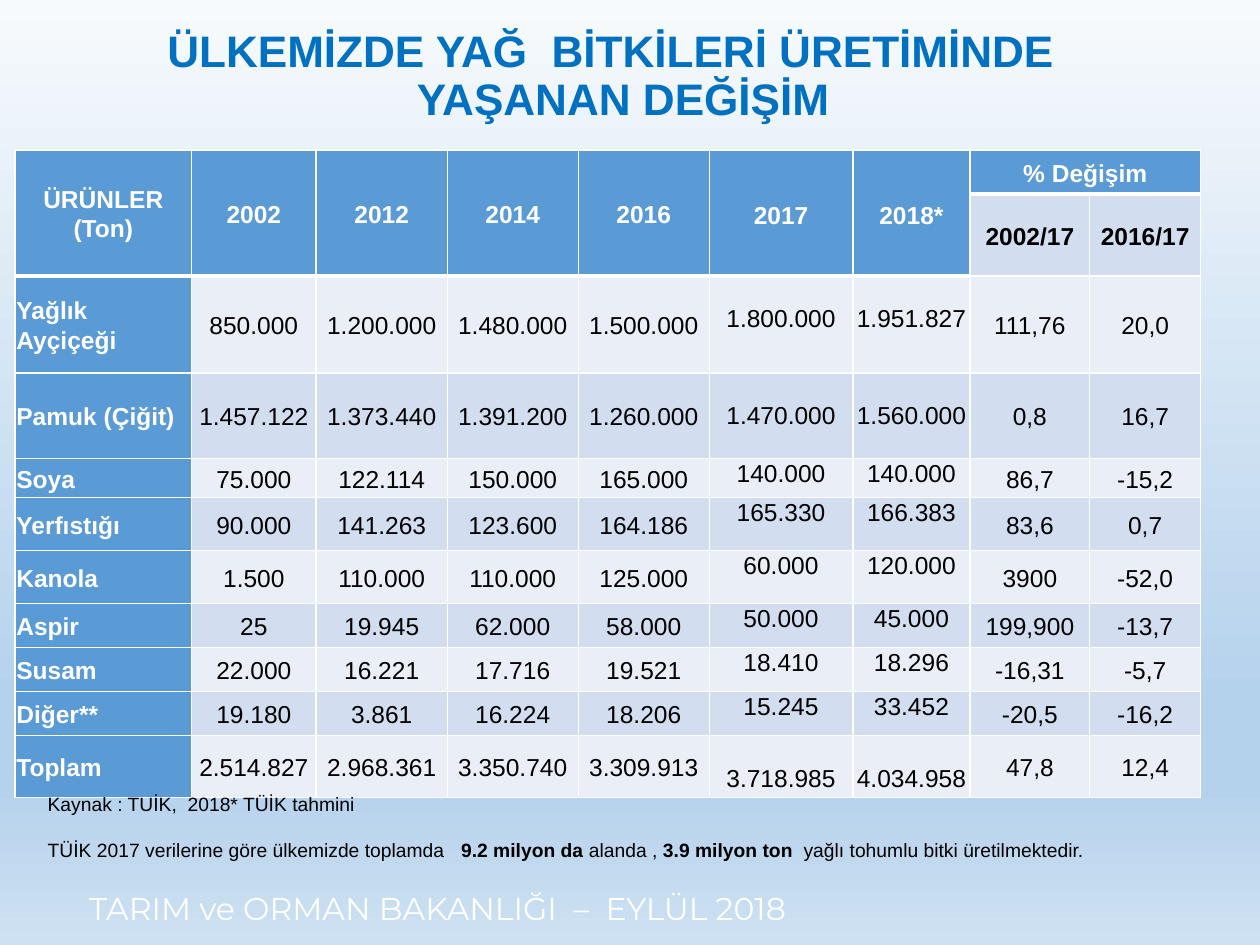
from lxml.etree import SubElement
from pptx import Presentation
from pptx.dml.color import RGBColor
from pptx.enum.text import MSO_ANCHOR, MSO_AUTO_SIZE, PP_ALIGN
from pptx.oxml.ns import qn
from pptx.util import Inches, Pt

WHITE = RGBColor(0xFF, 0xFF, 0xFF)
BLACK = RGBColor(0x00, 0x00, 0x00)
TITLE_BLUE = RGBColor(0x00, 0x70, 0xC0)
HEADER_BLUE = RGBColor(0x5B, 0x9B, 0xD5)
LIGHT_BAND = RGBColor(0xEA, 0xEF, 0xF7)
DARK_BAND = RGBColor(0xD2, 0xDE, 0xEF)
BACKGROUND_STOPS = [
    (0, RGBColor(0xF7, 0xFA, 0xFD)),
    (74, RGBColor(0xB5, 0xD2, 0xEC)),
    (83, RGBColor(0xB5, 0xD2, 0xEC)),
    (100, RGBColor(0xCE, 0xE1, 0xF2)),
]

COLUMN_WIDTHS = [1.4, 0.99, 1.04, 1.04, 1.04, 1.14, 0.93, 0.95, 0.88]
ROW_HEIGHTS = [0.35, 0.63, 0.77, 0.68, 0.31, 0.42, 0.42, 0.35, 0.35, 0.35, 0.49]
HEADERS = ["ÜRÜNLER\n(Ton)", "2002", "2012", "2014", "2016", "2017", "2018*"]
CHANGE_PERIODS = ["2002/17", "2016/17"]
PRODUCTS = [
    ["Yağlık Ayçiçeği", "850.000", "1.200.000", "1.480.000", "1.500.000",
     "1.800.000", "1.951.827", "111,76", "20,0"],
    ["Pamuk (Çiğit)", "1.457.122", "1.373.440", "1.391.200", "1.260.000",
     "1.470.000", "1.560.000", "0,8", "16,7"],
    ["Soya", "75.000", "122.114", "150.000", "165.000",
     "140.000", "140.000", "86,7", "-15,2"],
    ["Yerfıstığı", "90.000", "141.263", "123.600", "164.186",
     "165.330", "166.383", "83,6", "0,7"],
    ["Kanola", "1.500", "110.000", "110.000", "125.000",
     "60.000", "120.000", "3900", "-52,0"],
    ["Aspir", "25", "19.945", "62.000", "58.000",
     "50.000", "45.000", "199,900", "-13,7"],
    ["Susam", "22.000", "16.221", "17.716", "19.521",
     "18.410", "18.296", "-16,31", "-5,7"],
    ["Diğer**", "19.180", "3.861", "16.224", "18.206",
     "15.245", "33.452", "-20,5", "-16,2"],
    ["Toplam", "2.514.827", "2.968.361", "3.350.740", "3.309.913",
     "3.718.985", "4.034.958", "47,8", "12,4"],
]
TOP_ALIGNED_COLUMNS = (5, 6)
HEADER_DROP = 0.4
LINE_DROPS = {"Yağlık Ayçiçeği": 0.22, "Pamuk (Çiğit)": 0.22, "Toplam": 0.22}


def style_font(font, size, color, bold=False, name="Arial"):
    """Set the family, size, colour and weight of a font."""
    font.name = name
    font.size = Pt(size)
    font.bold = bold
    font.color.rgb = color


def paint_background(slide):
    """Fill the slide with a vertical four-stop gradient."""
    fill = slide.background.fill
    fill.gradient()
    fill.gradient_angle = 270
    stop_list = next(slide.element.iter(qn("a:gsLst")))
    for stop in list(stop_list):
        stop_list.remove(stop)
    for percent, color in BACKGROUND_STOPS:
        stop = SubElement(stop_list, qn("a:gs"), pos=str(percent * 1000))
        SubElement(stop, qn("a:srgbClr"), val=str(color))


def place_title(slide, left, top, width, height):
    """Place the two-line title."""
    title = slide.shapes.title
    title.left, title.top, title.width, title.height = left, top, width, height
    text_frame = title.text_frame
    text_frame.text = "ÜLKEMİZDE YAĞ  BİTKİLERİ ÜRETİMİNDE  \vYAŞANAN DEĞİŞİM"
    text_frame.auto_size = MSO_AUTO_SIZE.NONE
    text_frame.vertical_anchor = MSO_ANCHOR.MIDDLE
    paragraph = text_frame.paragraphs[0]
    paragraph.alignment = PP_ALIGN.CENTER
    paragraph.line_spacing = 0.9
    for run in paragraph.runs:
        style_font(run.font, 25.2, TITLE_BLUE, True)


def set_borders(cell, bottom_width):
    """Give a cell white borders with the given bottom width in points."""
    properties = cell._tc.get_or_add_tcPr()
    for side, width in (("L", 1), ("R", 1), ("T", 1), ("B", bottom_width)):
        line = SubElement(properties, qn(f"a:ln{side}"), w=str(Pt(width)))
        fill = SubElement(line, qn("a:solidFill"))
        SubElement(fill, qn("a:srgbClr"), val=str(WHITE))


def fill_cell(cell, text, fill, color, bold, align=PP_ALIGN.CENTER, drop=None):
    """Write a cell, centred vertically or dropped from its top edge."""
    cell.text_frame.text = text
    cell.fill.solid()
    cell.fill.fore_color.rgb = fill
    centred = drop is None
    cell.vertical_anchor = MSO_ANCHOR.MIDDLE if centred else MSO_ANCHOR.TOP
    cell.margin_left = cell.margin_right = Inches(0.01 if centred else 0)
    cell.margin_top = Inches(0.01 if centred else drop)
    cell.margin_bottom = 0
    for paragraph in cell.text_frame.paragraphs:
        paragraph.alignment = align
        paragraph.line_spacing = 1.07
        for run in paragraph.runs:
            style_font(run.font, 14, color, bold)


def fill_header(table):
    """Write the merged header cells and the two change periods."""
    for column, text in enumerate(HEADERS):
        table.cell(0, column).merge(table.cell(1, column))
        drop = HEADER_DROP if column in TOP_ALIGNED_COLUMNS else None
        fill_cell(table.cell(0, column), text, HEADER_BLUE, WHITE, True, drop=drop)
    first_change = len(HEADERS)
    table.cell(0, first_change).merge(table.cell(0, first_change + 1))
    fill_cell(table.cell(0, first_change), "% Değişim", HEADER_BLUE, WHITE, True)
    for column, text in enumerate(CHANGE_PERIODS, first_change):
        fill_cell(table.cell(1, column), text, DARK_BAND, BLACK, True)


def fill_products(table):
    """Write one banded row for each product."""
    for row, (product, *values) in enumerate(PRODUCTS, 2):
        band = DARK_BAND if row % 2 else LIGHT_BAND
        fill_cell(table.cell(row, 0), product, HEADER_BLUE, WHITE, True, PP_ALIGN.LEFT)
        for column, value in enumerate(values, 1):
            top_aligned = column in TOP_ALIGNED_COLUMNS
            drop = LINE_DROPS.get(product, 0) if top_aligned else None
            fill_cell(table.cell(row, column), value, band, BLACK, False, drop=drop)


def add_production_table(slide, left, top, width, height):
    """Add the table of oil crop production."""
    table = slide.shapes.add_table(
        len(ROW_HEIGHTS), len(COLUMN_WIDTHS), left, top, width, height).table
    for column, column_width in zip(table.columns, COLUMN_WIDTHS):
        column.width = Inches(column_width)
    for row, row_height in zip(table.rows, ROW_HEIGHTS):
        row.height = Inches(row_height)
    for row in range(len(ROW_HEIGHTS)):
        for column in range(len(COLUMN_WIDTHS)):
            is_header = row == 0 or (row == 1 and column < len(HEADERS))
            set_borders(table.cell(row, column), 3 if is_header else 1)
    fill_header(table)
    fill_products(table)


def add_text(slide, left, top, width, height):
    """Add an empty wrapping text box and return its text frame."""
    text_frame = slide.shapes.add_textbox(left, top, width, height).text_frame
    text_frame.word_wrap = True
    return text_frame


def add_notes(slide, left, top, width, height):
    """Add the source line and the summary sentence."""
    text_frame = add_text(slide, left, top, width, height)
    text_frame.text = "Kaynak : TUİK,  2018* TÜİK tahmini"
    style_font(text_frame.paragraphs[0].runs[0].font, 11, BLACK)
    summary = text_frame.add_paragraph()
    summary.space_before = Pt(13)
    for text, bold in (
        ("TÜİK 2017 verilerine göre ülkemizde toplamda   ", False),
        ("9.2 milyon da ", True),
        ("alanda , ", False),
        ("3.9 milyon ton  ", True),
        ("yağlı tohumlu bitki üretilmektedir.", False),
    ):
        run = summary.add_run()
        run.text = text
        style_font(run.font, 11, BLACK, bold)


def add_footer(slide, left, top, width, height):
    """Add the ministry and date line."""
    text_frame = add_text(slide, left, top, width, height)
    text_frame.text = "TARIM ve ORMAN BAKANLIĞI  –  EYLÜL 2018"
    style_font(text_frame.paragraphs[0].runs[0].font, 18, WHITE, name="Montserrat")


def main():
    """Build and save the presentation."""
    presentation = Presentation()
    presentation.slide_width, presentation.slide_height = Inches(10), Inches(7.5)
    slide = presentation.slides.add_slide(presentation.slide_layouts[5])
    paint_background(slide)
    add_footer(slide, Inches(0.61), Inches(7.01), Inches(9.39), Inches(0.4))
    place_title(slide, Inches(0.39), Inches(0.22), Inches(9.11), Inches(0.79))
    add_production_table(slide, Inches(0.12), Inches(1.19), Inches(9.4), Inches(5.05))
    add_notes(slide, Inches(0.28), Inches(6.24), Inches(9.15), Inches(0.84))
    presentation.save("out.pptx")


if __name__ == "__main__":
    main()
